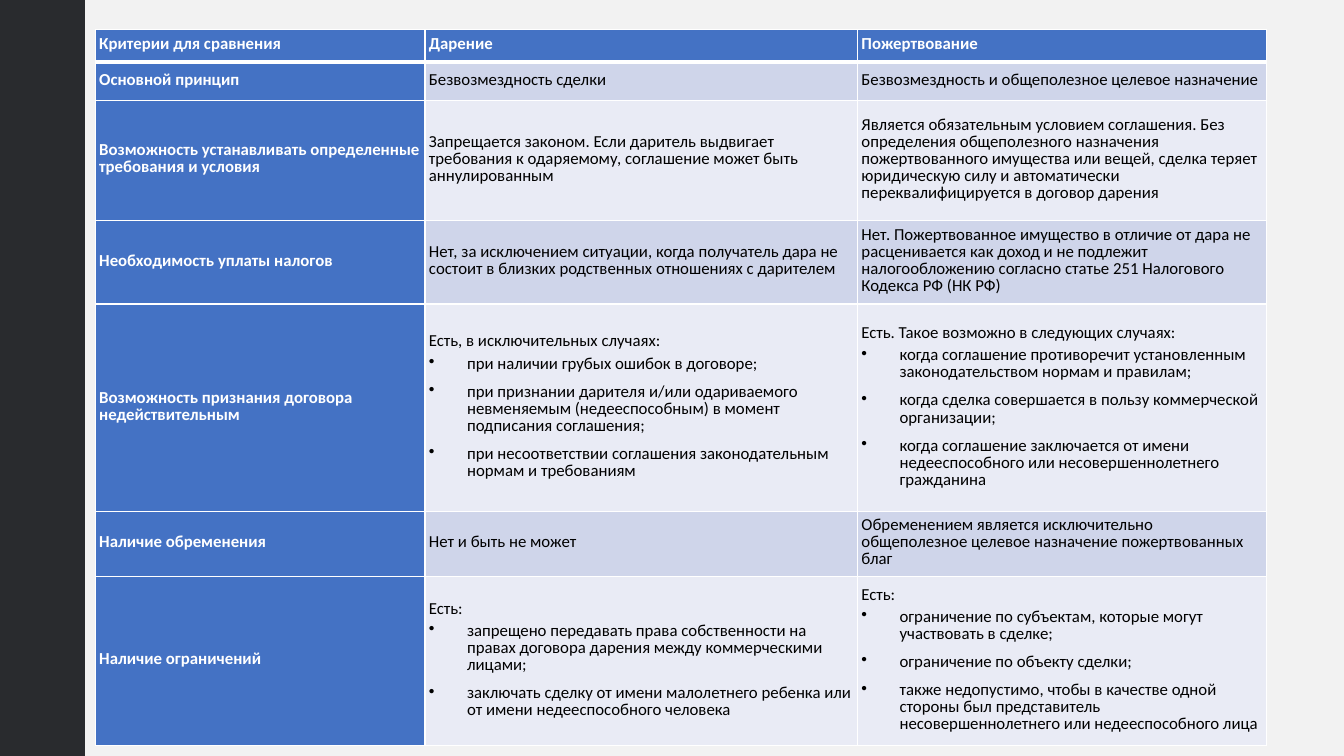
from dataclasses import dataclass

from lxml import etree
from pptx import Presentation
from pptx.dml.color import RGBColor
from pptx.enum.shapes import MSO_SHAPE
from pptx.enum.text import MSO_ANCHOR
from pptx.oxml.ns import qn
from pptx.util import Cm, Pt

RECTANGLE = MSO_SHAPE.RECTANGLE
MIDDLE = MSO_ANCHOR.MIDDLE

BACKGROUND = RGBColor(0xF2, 0xF2, 0xF2)
SIDEBAR = RGBColor(0x29, 0x2B, 0x2E)
HEADING = RGBColor(0x44, 0x72, 0xC4)
BAND_DARK = RGBColor(0xCF, 0xD5, 0xEA)
BAND_LIGHT = RGBColor(0xE9, 0xEB, 0xF5)
WHITE = RGBColor(0xFF, 0xFF, 0xFF)
BLACK = RGBColor(0x00, 0x00, 0x00)

FONT = "Calibri"
COLUMN_WIDTHS = (8.31, 10.9, 10.31)
INSET = Cm(0.1)
HANGING = Cm(0.96)
TAB_STOP = Cm(1.27)


@dataclass(frozen=True)
class Entry:
    text: str
    points: tuple[str, ...] = ()


@dataclass(frozen=True)
class Criterion:
    height: float
    name: str
    gift: Entry
    donation: Entry


CRITERIA = (
    Criterion(0.81, "Критерии для сравнения", Entry("Дарение"), Entry("Пожертвование")),
    Criterion(
        0.97, "Основной принцип",
        Entry("Безвозмездность сделки"),
        Entry("Безвозмездность и общеполезное целевое назначение"),
    ),
    Criterion(
        3.02, "Возможность устанавливать определенные требования и условия",
        Entry("Запрещается законом. Если даритель выдвигает требования к одаряемому, "
              "соглашение может быть аннулированным"),
        Entry("Является обязательным условием соглашения. Без определения общеполезного "
              "назначения пожертвованного имущества или вещей, сделка теряет юридическую "
              "силу и автоматически переквалифицируется в договор дарения"),
    ),
    Criterion(
        2.11, "Необходимость уплаты налогов",
        Entry("Нет, за исключением ситуации, когда получатель дара не состоит в близких "
              "родственных отношениях с дарителем"),
        Entry("Нет. Пожертвованное имущество в отличие от дара не расценивается как доход "
              "и не подлежит налогообложению согласно статье 251 Налогового Кодекса РФ (НК РФ)"),
    ),
    Criterion(
        5.23, "Возможность признания договора недействительным",
        Entry("Есть, в исключительных случаях:", (
            "при наличии грубых ошибок в договоре;",
            "при признании дарителя и/или одариваемого невменяемым (недееспособным) "
            "в момент подписания соглашения;",
            "при несоответствии соглашения законодательным нормам и требованиям",
        )),
        Entry("Есть. Такое возможно в следующих случаях:", (
            "когда соглашение противоречит установленным законодательством нормам и правилам;",
            "когда сделка совершается в пользу коммерческой организации;",
            "когда соглашение заключается от имени недееспособного или "
            "несовершеннолетнего гражданина",
        )),
    ),
    Criterion(
        1.63, "Наличие обременения",
        Entry("Нет и быть не может"),
        Entry("Обременением является исключительно общеполезное целевое назначение "
              "пожертвованных благ"),
    ),
    Criterion(
        4.27, "Наличие ограничений",
        Entry("Есть:", (
            "запрещено передавать права собственности на правах договора дарения "
            "между коммерческими лицами;",
            "заключать сделку от имени малолетнего ребенка или от имени недееспособного человека",
        )),
        Entry("Есть:", (
            "ограничение по субъектам, которые могут участвовать в сделке;",
            "ограничение по объекту сделки;",
            "также недопустимо, чтобы в качестве одной стороны был представитель "
            "несовершеннолетнего или недееспособного лица",
        )),
    ),
)


def add_borders(cell, top: float, bottom: float) -> None:
    properties = cell._tc.get_or_add_tcPr()
    for side, width in (("L", 1), ("R", 1), ("T", top), ("B", bottom)):
        line = etree.SubElement(properties, qn(f"a:ln{side}"), w=str(Pt(width)))
        fill = etree.SubElement(line, qn("a:solidFill"))
        etree.SubElement(fill, qn("a:srgbClr"), val=str(WHITE))


def make_bullet(paragraph, is_last: bool) -> None:
    properties = paragraph._p.get_or_add_pPr()
    properties.set("marL", str(HANGING))
    properties.set("indent", str(-HANGING))
    etree.SubElement(properties, qn("a:buChar"), char="•")
    tabs = etree.SubElement(properties, qn("a:tabLst"))
    etree.SubElement(tabs, qn("a:tab"), pos=str(TAB_STOP), algn="l")
    paragraph.space_before = Pt(3.9)
    paragraph.space_after = Pt(15.3 if is_last else 3.9)


def write_entry(cell, entry: Entry, color: RGBColor, bold: bool) -> None:
    frame = cell.text_frame
    frame.text = entry.text
    for number, point in enumerate(entry.points, start=1):
        bullet = frame.add_paragraph()
        bullet.text = point
        make_bullet(bullet, number == len(entry.points))
    for paragraph in frame.paragraphs:
        paragraph.line_spacing = Pt(12.2)
        paragraph.font.name = FONT
        paragraph.font.size = Pt(12)
        paragraph.font.bold = bold
        paragraph.font.color.rgb = color


def add_comparison(slide) -> None:
    heights = [criterion.height for criterion in CRITERIA]
    comparison = slide.shapes.add_table(
        len(CRITERIA), len(COLUMN_WIDTHS), Cm(2.4), Cm(0.75),
        Cm(sum(COLUMN_WIDTHS)), Cm(sum(heights)),
    ).table
    comparison.first_col = True
    comparison.horz_banding = False
    for column, width in zip(comparison.columns, COLUMN_WIDTHS):
        column.width = Cm(width)

    for r, criterion in enumerate(CRITERIA):
        comparison.rows[r].height = Cm(criterion.height)
        band = BAND_DARK if r % 2 else BAND_LIGHT
        entries = (Entry(criterion.name), criterion.gift, criterion.donation)
        for c, entry in enumerate(entries):
            cell = comparison.cell(r, c)
            is_heading = r == 0 or c == 0
            cell.vertical_anchor = MIDDLE
            cell.margin_left = cell.margin_right = INSET
            cell.margin_top = cell.margin_bottom = INSET
            add_borders(cell, top=3 if r == 1 else 1, bottom=3 if r == 0 else 1)
            cell.fill.solid()
            cell.fill.fore_color.rgb = HEADING if is_heading else band
            write_entry(cell, entry, WHITE if is_heading else BLACK, is_heading)


def main() -> None:
    deck = Presentation()
    deck.slide_width, deck.slide_height = Cm(33.87), Cm(19.05)
    slide = deck.slides.add_slide(deck.slide_layouts[6])
    slide.background.fill.solid()
    slide.background.fill.fore_color.rgb = BACKGROUND

    # Dark strip along the left edge
    sidebar = slide.shapes.add_shape(RECTANGLE, 0, 0, Cm(2.14), deck.slide_height)
    sidebar.shadow.inherit = False
    sidebar.fill.solid()
    sidebar.fill.fore_color.rgb = SIDEBAR
    sidebar.line.fill.background()

    # Comparison of gift and donation
    add_comparison(slide)
    deck.save("out.pptx")


if __name__ == "__main__":
    main()
